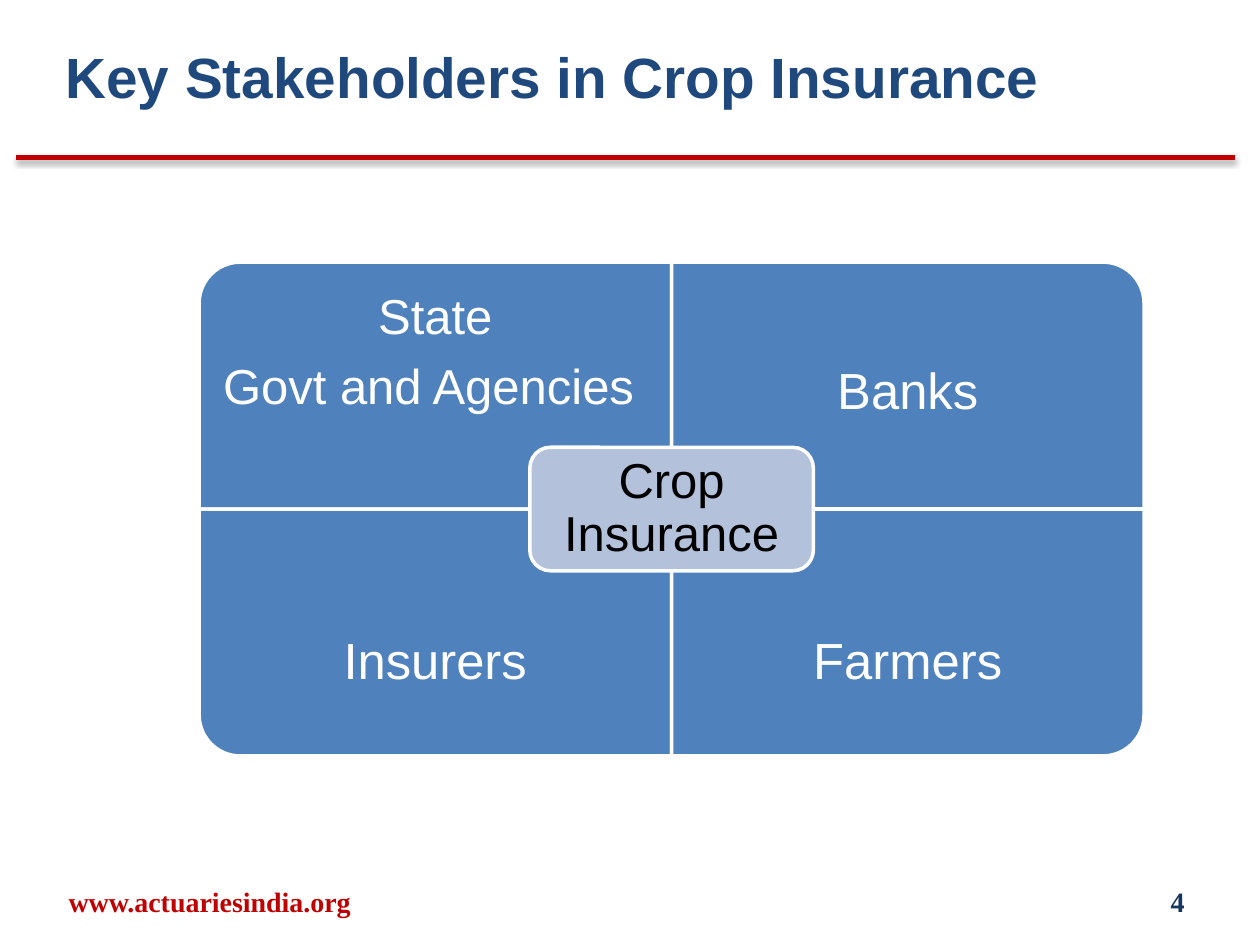
import pptx
import pptx.util
import pptx.dml.color
import pptx.enum.shapes
import pptx.enum.text
import pptx.oxml
import pptx.oxml.ns

Inches, Pt = pptx.util.Inches, pptx.util.Pt
RGB = pptx.dml.color.RGBColor.from_string
SHAPE = pptx.enum.shapes.MSO_SHAPE
ALIGN = pptx.enum.text.PP_ALIGN

THEME = {
    "sans": "Arial", "serif": "Times New Roman",
    "navy": "1F497D", "red": "C00000", "blue": "4F81BD", "pale": "B3C1DB",
    "white": "FFFFFF", "black": "000000", "page": "17375E",
    "title": 32.4, "label": 29, "small_label": 28, "footer": 16,
    "outline": 2, "rule": 3,
}


def write(frame, lines, size, color, font="sans", bold=False,
          align=ALIGN.CENTER, spacing=1.0, inset=0.1):
    """Fill a text frame, one paragraph per line, centred vertically."""
    frame.word_wrap = True
    frame.auto_size = pptx.enum.text.MSO_AUTO_SIZE.NONE
    frame.vertical_anchor = pptx.enum.text.MSO_ANCHOR.MIDDLE
    frame.margin_left = frame.margin_right = Inches(inset)
    frame.margin_top = frame.margin_bottom = Inches(0.05)
    for index, line in enumerate(lines):
        paragraph = frame.add_paragraph() if index else frame.paragraphs[0]
        paragraph.alignment = align
        paragraph.line_spacing = spacing
        paragraph.space_before = Pt(0.35 * THEME[size]) if index else Pt(0)
        run = paragraph.add_run()
        run.text = line
        run.font.name = THEME[font]
        run.font.size = Pt(THEME[size])
        run.font.bold = bold
        run.font.color.rgb = RGB(THEME[color])


def add_panel(kind, center_x, center_y, width, height, fill):
    panel = slide.shapes.add_shape(
        kind, Inches(center_x - width / 2), Inches(center_y - height / 2),
        Inches(width), Inches(height))
    panel.shadow.inherit = False
    panel.fill.solid()
    panel.fill.fore_color.rgb = RGB(THEME[fill])
    panel.line.color.rgb = RGB(THEME["white"])
    panel.line.width = Pt(THEME["outline"])
    return panel


deck = pptx.Presentation()
deck.slide_width, deck.slide_height = Inches(10), Inches(7.5)
slide = deck.slides.add_slide(deck.slide_layouts[5])

# Heading and the rule below it
heading = slide.shapes.title
heading.left, heading.top = Inches(0.42), Inches(0.17)
heading.width, heading.height = Inches(8.25), Inches(0.87)
write(heading.text_frame, ["Key Stakeholders in Crop Insurance"],
      "title", "navy", bold=True, align=ALIGN.LEFT)

rule = slide.shapes.add_connector(
    pptx.enum.shapes.MSO_CONNECTOR.STRAIGHT,
    Inches(0.13), Inches(1.25), Inches(9.8), Inches(1.25))
rule.line.color.rgb = RGB(THEME["red"])
rule.line.width = Pt(THEME["rule"])
rule.element.spPr.append(pptx.oxml.parse_xml(
    f'<a:effectLst {pptx.oxml.ns.nsdecls("a")}>'
    f'<a:outerShdw blurRad="{Pt(3.1)}" dist="{Pt(1.6)}" dir="5400000" rotWithShape="0">'
    '<a:srgbClr val="000000"><a:alpha val="38000"/></a:srgbClr>'
    '</a:outerShdw></a:effectLst>'))

# Two-by-two matrix; each quadrant turns its rounded corner outwards
MIDDLE_X, MIDDLE_Y = 5.33, 4.04
COLUMN, ROW = 3.75, 1.96
LABEL_HEIGHT = 0.75 * ROW
quadrants = [  # column, row, rotation, label size, inset, label centre, lines
    (0, 0, 270, "small_label", 0.16, 2.81, ["State", "Govt and Agencies "]),
    (1, 0, 0, "label", 0.23, 3.12, ["Banks"]),
    (0, 1, 180, "label", 0.23, 5.26, ["Insurers"]),
    (1, 1, 90, "label", 0.23, 5.26, ["Farmers"]),
]
for column, row, rotation, size, inset, label_y, lines in quadrants:
    center_x = MIDDLE_X + (column - 0.5) * COLUMN
    center_y = MIDDLE_Y + (row - 0.5) * ROW
    width, height = (ROW, COLUMN) if rotation % 180 else (COLUMN, ROW)
    quadrant = add_panel(SHAPE.ROUND_1_RECTANGLE, center_x, center_y,
                         width, height, "blue")
    quadrant.rotation = rotation
    label = slide.shapes.add_textbox(
        Inches(center_x - COLUMN / 2), Inches(label_y - LABEL_HEIGHT / 2),
        Inches(COLUMN), Inches(LABEL_HEIGHT))
    write(label.text_frame, lines, size, "white", spacing=0.9, inset=inset)

hub = add_panel(SHAPE.ROUNDED_RECTANGLE, MIDDLE_X, MIDDLE_Y,
                0.6 * COLUMN, ROW / 2, "pale")
write(hub.text_frame, ["Crop Insurance"], "small_label", "black",
      spacing=0.9, inset=0.17)

# Footer
footers = [
    (0.08, 3.17, "www.actuariesindia.org", "red", ALIGN.CENTER),
    (7.17, 2.33, "4", "page", ALIGN.RIGHT),
]
for left, width, words, color, align in footers:
    footer = slide.shapes.add_textbox(
        Inches(left), Inches(6.95), Inches(width), Inches(0.4))
    write(footer.text_frame, [words], "footer", color, font="serif",
          bold=True, align=align)

deck.save("out.pptx")
